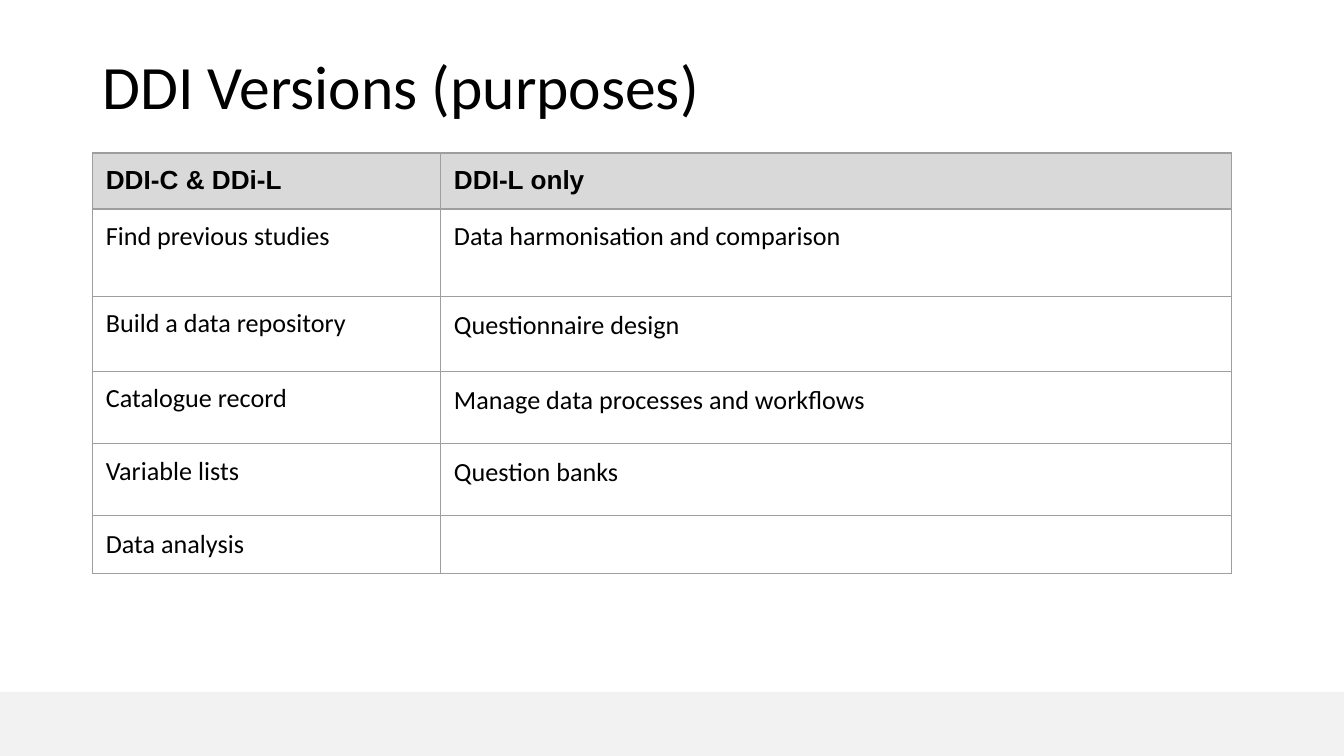
from lxml import etree
from pptx import Presentation
from pptx.dml.color import RGBColor
from pptx.enum.shapes import MSO_SHAPE
from pptx.enum.text import MSO_ANCHOR, PP_ALIGN
from pptx.oxml.ns import qn
from pptx.util import Cm, Pt

RECT = MSO_SHAPE.RECTANGLE
MIDDLE = MSO_ANCHOR.MIDDLE
LEFT = PP_ALIGN.LEFT

BLACK = RGBColor(0x00, 0x00, 0x00)
PALE = RGBColor(0xF2, 0xF2, 0xF2)
GREY = RGBColor(0xD9, 0xD9, 0xD9)
EDGE = RGBColor(0x9E, 0x9E, 0x9E)

TITLE = "DDI Versions (purposes)"
ROWS = [
    ("DDI-C & DDi-L", "DDI-L only"),
    ("Find previous studies", "Data harmonisation and comparison"),
    ("Build a data repository", "Questionnaire design"),
    ("Catalogue record", "Manage data processes and workflows"),
    ("Variable lists", "Question banks"),
    ("Data analysis", ""),
]
TIGHT = {(1, 0), (1, 1), (2, 0), (3, 0), (4, 0)}  # cells with 0.9 line spacing
WIDTHS = [6.58, 14.94]
HEIGHTS = [1.06, 1.65, 1.42, 1.37, 1.35, 1.08]
WIDE, HIGH = 25.4, 14.29
BAND = 1.21
EDGE_X = 1.75


def style(para, name, size, bold=False):
    para.font.name = name
    para.font.size = Pt(size)
    para.font.bold = bold
    para.font.color.rgb = BLACK


def frame(cell):
    """Draw a thin line on all four sides of a cell."""
    props = cell._tc.get_or_add_tcPr()
    for side in ("a:lnL", "a:lnR", "a:lnT", "a:lnB"):
        line = etree.SubElement(props, qn(side), w=str(Pt(0.75)))
        fill = etree.SubElement(line, qn("a:solidFill"))
        etree.SubElement(fill, qn("a:srgbClr"), val=str(EDGE))


def fill_cell(cell, text, head, tight):
    frame(cell)
    if head:
        cell.fill.solid()
        cell.fill.fore_color.rgb = GREY
    else:
        cell.fill.background()
    cell.margin_left = cell.margin_right = Cm(0.25)
    cell.margin_top = cell.margin_bottom = Cm(0.25)
    cell.text = text
    para = cell.text_frame.paragraphs[0]
    style(para, "Arial" if head else "Calibri", 14, head)
    if tight:
        para.line_spacing = 0.9
        para.space_before = Pt(8)
    if not text:
        # An empty cell takes its height from the end mark
        para._p.get_or_add_endParaRPr().set("sz", "1400")


def add_band(slide):
    band = slide.shapes.add_shape(
        RECT, 0, Cm(HIGH - BAND), Cm(WIDE), Cm(BAND))
    band.shadow.inherit = False
    band.fill.solid()
    band.fill.fore_color.rgb = PALE
    band.line.fill.background()


def add_title(slide):
    title = slide.shapes.title
    title.left, title.top = Cm(EDGE_X), Cm(0.76)
    title.width, title.height = Cm(21.9), Cm(1.88)
    box = title.text_frame
    box.text = TITLE
    box.vertical_anchor = MIDDLE
    box.margin_left = box.margin_right = Cm(0.19)
    box.margin_top = box.margin_bottom = Cm(0.1)
    para = box.paragraphs[0]
    para.alignment = LEFT
    para.line_spacing = 0.9
    style(para, "Calibri", 33)


def add_grid(slide):
    table = slide.shapes.add_table(
        len(ROWS), len(WIDTHS), Cm(EDGE_X), Cm(2.89),
        Cm(sum(WIDTHS)), Cm(sum(HEIGHTS))).table
    for col, width in zip(table.columns, WIDTHS):
        col.width = Cm(width)
    for row, height in zip(table.rows, HEIGHTS):
        row.height = Cm(height)
    for r, texts in enumerate(ROWS):
        for c, text in enumerate(texts):
            fill_cell(table.cell(r, c), text, r == 0, (r, c) in TIGHT)


def main():
    deck = Presentation()
    deck.slide_width, deck.slide_height = Cm(WIDE), Cm(HIGH)
    slide = deck.slides.add_slide(deck.slide_layouts[5])
    add_band(slide)
    add_title(slide)
    add_grid(slide)
    deck.save("out.pptx")


if __name__ == "__main__":
    main()
